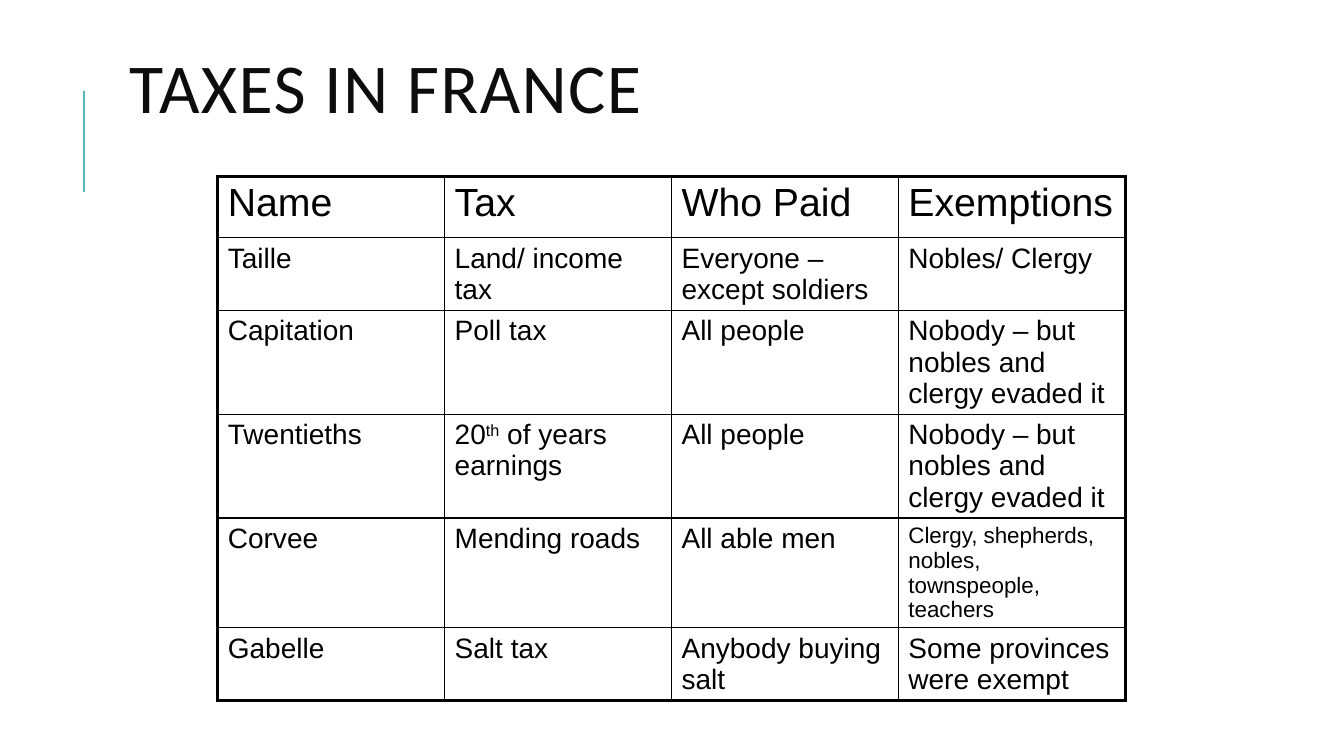
from dataclasses import dataclass

from lxml import etree
from pptx import Presentation
from pptx import util as u
from pptx.dml.color import RGBColor
from pptx.enum import shapes, text
from pptx.oxml.ns import qn

EMU_PER_PX = 9144  # 100 px to the inch
INK = "000000"
THIN, THICK = 1, 2.25


@dataclass(frozen=True)
class TaxRow:
    """One table row; text between carets is set as superscript."""
    entries: tuple[str, str, str, str]
    size: int = 20
    last_size: int = 20


TAXES = [
    TaxRow(("Name", "Tax", "Who Paid", "Exemptions"), 28, 28),
    TaxRow(("Taille", "Land/ income tax", "Everyone – except soldiers", "Nobles/ Clergy")),
    TaxRow(("Capitation", "Poll tax", "All people", "Nobody – but nobles and clergy evaded it")),
    TaxRow(("Twentieths", "20^th^ of years earnings", "All people",
            "Nobody – but nobles and clergy evaded it")),
    TaxRow(("Corvee", "Mending roads", "All able men",
            "Clergy, shepherds, nobles, townspeople, teachers"), last_size=16),
    TaxRow(("Gabelle", "Salt tax", "Anybody buying salt", "Some provinces were exempt")),
]


def px(length: int) -> u.Emu:
    return u.Emu(length * EMU_PER_PX)


def colour(value: str) -> RGBColor:
    return RGBColor.from_string(value)


def style_run(run, size: int, face: str, ink: str) -> None:
    run.font.size = u.Pt(size)
    run.font.name = face
    run.font.color.rgb = colour(ink)


def add_title(slide, wording: str) -> None:
    title = slide.shapes.title
    title.left, title.top, title.width, title.height = px(66), px(30), px(1200), px(125)
    frame = title.text_frame
    frame.text = wording
    frame.word_wrap = True
    frame.auto_size = text.MSO_AUTO_SIZE.NONE
    frame.vertical_anchor = text.MSO_ANCHOR.MIDDLE
    frame.margin_left = px(62)
    heading = frame.paragraphs[0]
    heading.alignment = text.PP_ALIGN.LEFT
    heading.line_spacing = 0.8
    style_run(heading.runs[0], 50, "Calibri", "0D0D0D")
    heading.runs[0].font._element.set("spc", "100")


def add_accent(slide) -> None:
    accent = slide.shapes.add_connector(
        shapes.MSO_CONNECTOR.STRAIGHT, px(83), px(190), px(83), px(90))
    accent.line.color.rgb = colour("58B6C0")
    accent.line.width = u.Pt(1.5)
    etree.SubElement(accent._element.spPr, qn("a:effectLst"))


def set_borders(cell, widths: dict[str, float]) -> None:
    properties = cell._tc.get_or_add_tcPr()
    for position, (side, width) in enumerate(widths.items()):
        border = etree.Element(qn(f"a:ln{side}"), w=str(u.Pt(width)))
        fill = etree.SubElement(border, qn("a:solidFill"))
        etree.SubElement(fill, qn("a:srgbClr"), val=INK)
        properties.insert(position, border)


def fill_cell(cell, wording: str, size: int) -> None:
    cell.fill.background()
    paragraph = cell.text_frame.paragraphs[0]
    spacing = etree.SubElement(paragraph._p.get_or_add_pPr(), qn("a:spcBef"))
    etree.SubElement(spacing, qn("a:spcPct"), val="20000")
    for index, part in enumerate(wording.split("^")):
        run = paragraph.add_run()
        run.text = part
        style_run(run, size, "Arial", INK)
        if index % 2:
            run.font._element.set("baseline", "30000")


def add_tax_table(slide, rows: list[TaxRow]) -> None:
    last_row, last_column = len(rows) - 1, len(rows[0].entries) - 1
    taxes = slide.shapes.add_table(
        last_row + 1, last_column + 1, px(216), px(175), px(900), px(61 * len(rows))).table
    taxes.first_row = taxes.horz_banding = False
    for r, row in enumerate(rows):
        for c, wording in enumerate(row.entries):
            cell = taxes.cell(r, c)
            fill_cell(cell, wording, row.last_size if c == last_column else row.size)
            set_borders(cell, {
                "L": THICK if c == 0 else THIN,
                "R": THICK if c == last_column else THIN,
                "T": THICK if r == 0 else THIN,
                "B": THICK if r == last_row else THIN,
            })


def main() -> None:
    deck = Presentation()
    deck.slide_width, deck.slide_height = px(1333), px(750)
    slide = deck.slides.add_slide(deck.slide_layouts[5])  # title only

    # Heading with its accent line
    add_accent(slide)
    add_title(slide, "TAXES IN FRANCE")

    # Taxes, payers and exemptions
    add_tax_table(slide, TAXES)

    deck.save("out.pptx")


if __name__ == "__main__":
    main()
